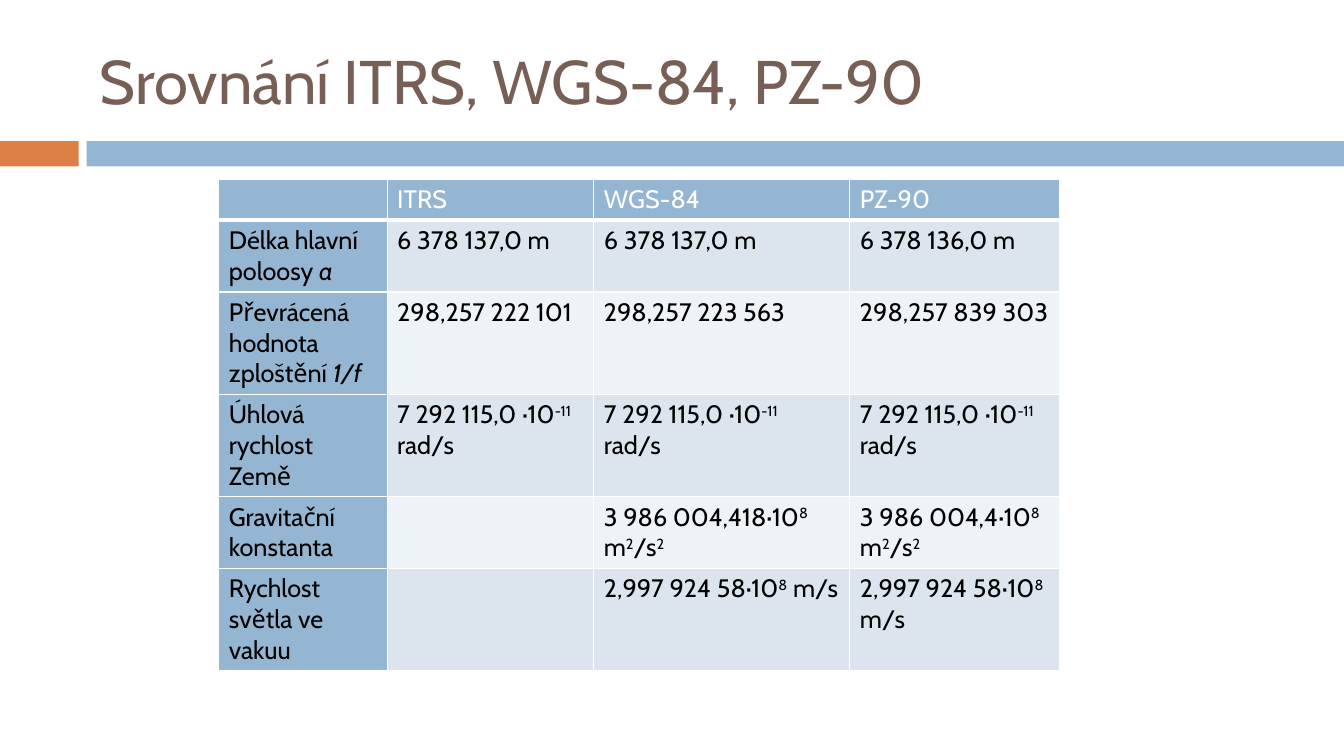
"""Build a slide comparing the ITRS, WGS-84 and PZ-90 reference systems."""
from lxml import etree
from pptx import Presentation
from pptx.dml.color import RGBColor
from pptx.enum.shapes import MSO_SHAPE
from pptx.enum.text import MSO_ANCHOR, PP_ALIGN
from pptx.oxml.ns import qn
from pptx.util import Inches, Pt

RECT = MSO_SHAPE.RECTANGLE
MIDDLE = MSO_ANCHOR.MIDDLE
LEFT = PP_ALIGN.LEFT
FONT = "Cabin"
BLUE = "94B6D2"
WHITE = "FFFFFF"
BANDS = ["DCE5EE", "EEF3F7"]

OMEGA = "7 292 115,0 ·10^-11^ rad/s"
LIGHT = "2,997 924 58·10^8^ m/s"
# ^ toggles superscript, _ toggles italic
ROWS = [
    ["", "ITRS", "WGS-84", "PZ-90"],
    ["Délka hlavní poloosy _a_", "6 378 137,0 m", "6 378 137,0 m", "6 378 136,0 m"],
    ["Převrácená hodnota zploštění _1/f_",
     "298,257 222 101", "298,257 223 563", "298,257 839 303"],
    ["Úhlová rychlost Země", OMEGA, OMEGA, OMEGA],
    ["Gravitační konstanta", "",
     "3 986 004,418·10^8^ m^2^/s^2^", "3 986 004,4·10^8^ m^2^/s^2^"],
    ["Rychlost světla ve vakuu", "", LIGHT, LIGHT],
]
COL_WIDTHS = [1.67, 2.05, 2.54, 2.08]


def rgb(color):
    return RGBColor.from_string(color)


def add_border(cell, side, width):
    tcPr = cell._tc.get_or_add_tcPr()
    ln = etree.SubElement(tcPr, qn(f"a:ln{side}"), w=str(Pt(width)))
    fill = etree.SubElement(ln, qn("a:solidFill"))
    etree.SubElement(fill, qn("a:srgbClr"), val=WHITE)


prs = Presentation()
prs.slide_width = Inches(13.33)
prs.slide_height = Inches(7.5)
s = prs.slides.add_slide(prs.slide_layouts[5])

for left, width, color in [(0, 0.78, "DD8047"), (0.86, 12.47, BLUE)]:
    sp = s.shapes.add_shape(RECT, Inches(left), Inches(1.4), Inches(width), Inches(0.25))
    sp.shadow.inherit = False
    sp.fill.solid()
    sp.fill.fore_color.rgb = rgb(color)
    sp.line.fill.background()

title = s.shapes.title
title.left, title.top = Inches(0.89), Inches(0.25)
title.width, title.height = Inches(11.89), Inches(1.08)
tf = title.text_frame
tf.text = "Srovnání ITRS, WGS-84, PZ-90"
tf.vertical_anchor = MIDDLE
p = tf.paragraphs[0]
p.alignment = LEFT
p.font.name = FONT
p.font.size = Pt(44)
p.font.color.rgb = rgb("775F55")

table = s.shapes.add_table(len(ROWS), len(COL_WIDTHS), Inches(2.17), Inches(1.78),
                           Inches(8.33), Inches(4.5)).table
for column, width in zip(table.columns, COL_WIDTHS):
    column.width = Inches(width)

for i, row in enumerate(ROWS):
    table.rows[i].height = Inches(0.41 if i else 0.37)
    for j, text in enumerate(row):
        cell = table.cell(i, j)
        for side in "LRTB":
            add_border(cell, side, 3 if i == 0 and side == "B" else 1)
        cell.fill.solid()
        cell.fill.fore_color.rgb = rgb(BLUE if i == 0 or j == 0 else BANDS[(i - 1) % 2])
        p = cell.text_frame.paragraphs[0]
        p.font.name = FONT
        p.font.size = Pt(18)
        p.font.bold = False
        p.font.color.rgb = rgb("000000" if i else WHITE)
        mark = "_" if "_" in text else "^"
        for k, part in enumerate(text.split(mark)):
            if not part:
                continue
            r = p.add_run()
            r.text = part
            if k % 2 and mark == "_":
                r.font.italic = True
            elif k % 2:
                r.font._element.set("baseline", "30000")

prs.save("out.pptx")
